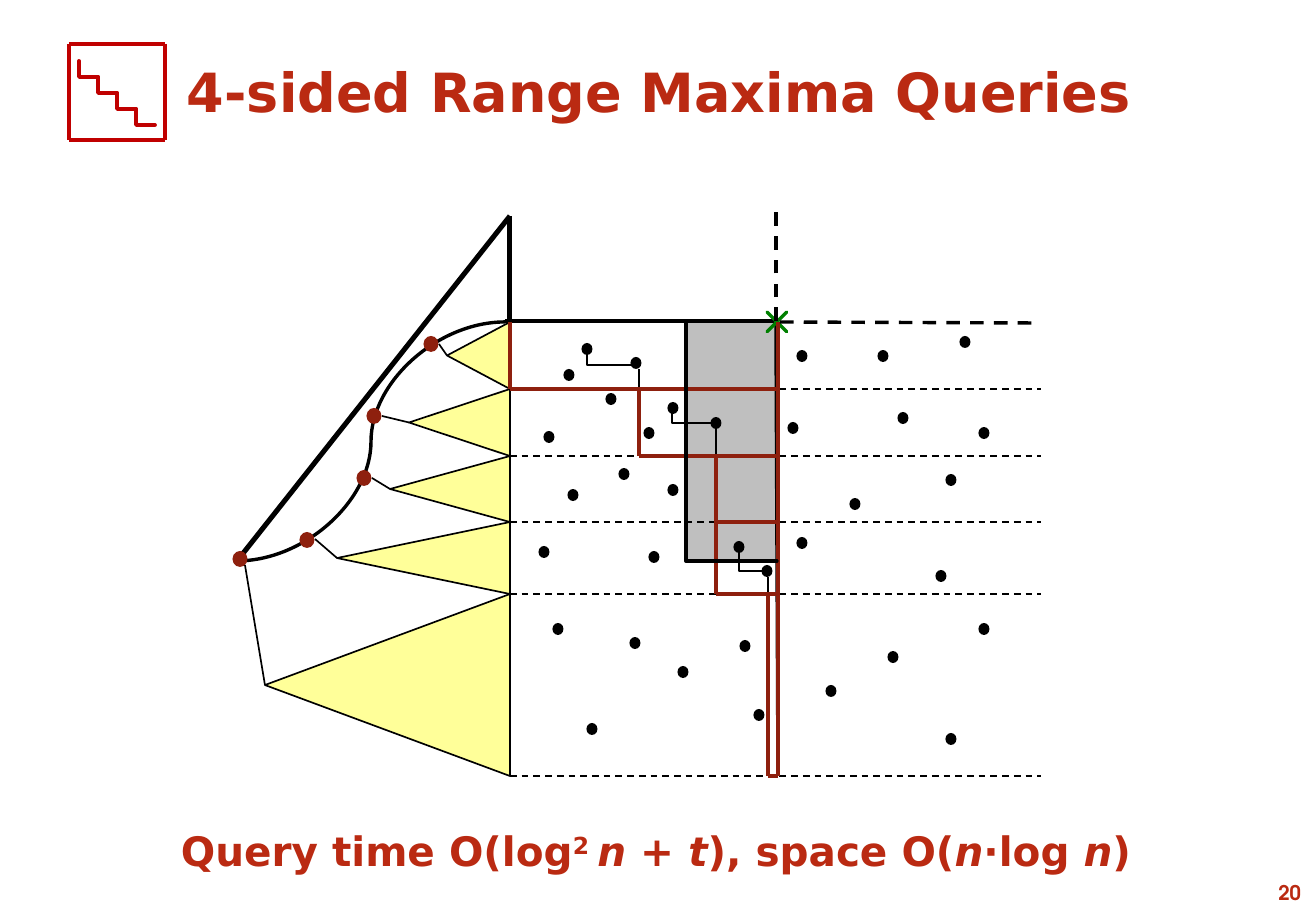
from lxml import etree
from pptx import Presentation
from pptx.dml.color import RGBColor
from pptx.enum.dml import MSO_LINE
from pptx.enum.shapes import MSO_CONNECTOR, MSO_SHAPE
from pptx.enum.text import MSO_ANCHOR, MSO_AUTO_SIZE, PP_ALIGN
from pptx.oxml.ns import qn
from pptx.util import Pt

EMU_PER_PX = 7526
SLIDE_WIDTH, SLIDE_HEIGHT = 1316, 911
TITLE_ONLY = 5

STRAIGHT, CURVE = MSO_CONNECTOR.STRAIGHT, MSO_CONNECTOR.CURVE
RECTANGLE, TRIANGLE = MSO_SHAPE.RECTANGLE, MSO_SHAPE.ISOSCELES_TRIANGLE
CORNER, DOT = MSO_SHAPE.CORNER, MSO_SHAPE.FLOWCHART_CONNECTOR
CROSS = MSO_SHAPE.MATH_MULTIPLY
DASH = MSO_LINE.DASH
LEFT, CENTER, RIGHT = PP_ALIGN.LEFT, PP_ALIGN.CENTER, PP_ALIGN.RIGHT
MIDDLE, NO_AUTOFIT = MSO_ANCHOR.MIDDLE, MSO_AUTO_SIZE.NONE

BLACK = RGBColor(0x00, 0x00, 0x00)
GREY = RGBColor(0xBF, 0xBF, 0xBF)
YELLOW = RGBColor(0xFF, 0xFF, 0x99)
GREEN = RGBColor(0x00, 0x80, 0x00)
ICON_RED = RGBColor(0xC0, 0x00, 0x00)
TEXT_RED = RGBColor(0xBA, 0x2A, 0x12)
DARK_RED = RGBColor(0x8E, 0x20, 0x0E)

BODY_FONT, NUMBER_FONT = "DejaVu Sans", "TeX Gyre Adventor"

AXIS, SWEEP, FAR_RIGHT = 510, 778, 1041
ROWS = [322, 389, 456, 522, 594, 776]
ROW_SPANS = list(zip(ROWS, ROWS[1:]))
STAIR_LEFTS = [AXIS, 639, 716, 716, 768]
QUERY_RANGE = (686, 322, 91, 239)
APEXES = [447, 409, 390, 337, 265]
PATH_NODES = [(431, 344), (374, 416), (364, 478), (307, 540), (240, 559)]
BRANCH_STARTS = [(439, 344), (382, 416), (372, 478), (315, 539), (245, 565)]
STAIRCASES = [
    ((587, 350, 52, 15), (639, 369, 639, 389)),
    ((672, 408, 43, 15), (716, 426, 716, 456)),
    ((739, 547, 29, 24), (768, 577, 768, 594)),
]
POINTS = [
    (624, 474), (587, 349), (573, 495), (802, 543), (549, 437), (965, 342),
    (649, 433), (636, 363), (855, 504), (654, 557), (592, 729), (767, 571),
    (544, 552), (883, 356), (673, 408), (716, 423), (951, 739), (802, 356),
    (558, 629), (941, 576), (831, 691), (793, 428), (951, 480), (903, 418),
    (635, 643), (984, 433), (673, 490), (984, 629), (745, 646), (893, 657),
    (683, 672), (739, 547), (569, 375), (759, 715), (611, 399),
]
SUMMARY = [
    ("Query time O(log", {}), ("2 ", {"raised": 30}), ("n", {"italic": True}),
    (" + ", {}), ("t", {"italic": True}), ("), space O(", {}),
    ("n", {"italic": True}), ("∙log ", {}), ("n", {"italic": True}), (")", {}),
]


def px(*lengths):
    """Turn pixel lengths into EMU."""
    return [round(length * EMU_PER_PX) for length in lengths]


def write(paragraph, text, *, size, font=BODY_FONT, italic=False, raised=0):
    """Add one formatted run of text to a paragraph."""
    run = paragraph.add_run()
    run.text = text
    run.font.name = font
    run.font.size = Pt(size)
    run.font.bold = True
    run.font.italic = italic
    run.font.color.rgb = TEXT_RED
    if raised:
        run.font._element.set("baseline", str(raised * 1000))


class Diagram:
    """Draws styled elements on the current slide."""

    def __init__(self, slide):
        """Remember the slide to draw on."""
        self.slide = slide
        self.shapes = slide.shapes

    def title(self, text, box, indent):
        """Place and fill the title placeholder."""
        heading = self.shapes.title
        heading.left, heading.top, heading.width, heading.height = px(*box)
        frame = heading.text_frame
        frame.auto_size = NO_AUTOFIT
        frame.vertical_anchor = MIDDLE
        frame.margin_left = px(indent)[0]
        frame.paragraphs[0].alignment = LEFT
        write(frame.paragraphs[0], text, size=32)

    def label(self, runs, box, align, **style):
        """Add a one-line text box made of formatted runs."""
        frame = self.shapes.add_textbox(*px(*box)).text_frame
        frame.word_wrap = True
        frame.paragraphs[0].alignment = align
        for text, changes in runs:
            write(frame.paragraphs[0], text, **style, **changes)

    def line(self, x1, y1, x2, y2, color=BLACK, width=1, dash=None, kind=STRAIGHT):
        """Add a connector between two points."""
        connector = self.shapes.add_connector(kind, *px(x1, y1, x2, y2))
        connector.line.color.rgb = color
        connector.line.width = Pt(width)
        if dash:
            connector.line.dash_style = dash
        etree.SubElement(connector._element.spPr, qn("a:effectLst"))

    def shape(self, kind, box, fill=None, color=None, width=1, adjust=()):
        """Add a preset shape with an optional fill and outline."""
        shape = self.shapes.add_shape(kind, *px(*box))
        shape.shadow.inherit = False
        if fill is None:
            shape.fill.background()
        else:
            shape.fill.solid()
            shape.fill.fore_color.rgb = fill
        if color is None:
            shape.line.fill.background()
        else:
            shape.line.color.rgb = color
            shape.line.width = Pt(width)
        for index, value in enumerate(adjust):
            shape.adjustments[index] = value
        return shape

    def corner(self, box, color=BLACK, width=1):
        """Add a thin L running down and then right."""
        self.shape(CORNER, box, color=color, width=width, adjust=(0, 0))

    def dot(self, x, y, width, height, color):
        """Add a filled dot around a centre."""
        self.shape(DOT, (x - width / 2, y - height / 2, width, height), color)

    def subtree(self, apex, top, bottom):
        """Add a triangle pointing left from the axis."""
        base, depth = bottom - top, AXIS - apex
        center_x, center_y = (apex + AXIS) / 2, (top + bottom) / 2
        box = (center_x - base / 2, center_y - depth / 2, base, depth)
        self.shape(TRIANGLE, box, YELLOW, BLACK).rotation = 270

    def icon(self, left, top, side):
        """Add the framed staircase beside the title."""
        right, bottom = left + side, top + side
        for edge in [(left, top, left, bottom), (left, bottom, right, bottom),
                     (right, top, right, bottom), (left, top, right, top)]:
            self.line(*edge, ICON_RED, 2.25)
        for step in range(4):
            self.corner((left + 10 + 19 * step, top + 17 + 16 * step, 19, 16),
                        ICON_RED, 2.25)


def main():
    """Build and save the slide."""
    deck = Presentation()
    deck.slide_width, deck.slide_height = px(SLIDE_WIDTH, SLIDE_HEIGHT)
    diagram = Diagram(deck.slides.add_slide(deck.slide_layouts[TITLE_ONLY]))

    diagram.title("4-sided Range Maxima Queries", (64, 44, 1185, 94), 123)
    diagram.icon(69, 44, 96)

    diagram.shape(RECTANGLE, QUERY_RANGE, GREY)
    for staircase, stub in STAIRCASES:
        diagram.corner(staircase)
        diagram.line(*stub)

    diagram.line(237, 561, 505, 322, width=2, kind=CURVE)
    for apex, (top, bottom) in zip(APEXES, ROW_SPANS):
        diagram.subtree(apex, top, bottom)
    diagram.line(237, 561, AXIS, 216, width=3)
    diagram.line(AXIS, 322, AXIS, 216, width=3)
    for node, start, apex, (top, bottom) in zip(
            PATH_NODES, BRANCH_STARTS, APEXES, ROW_SPANS):
        diagram.dot(*node, 15, 16, DARK_RED)
        diagram.line(*start, apex, (top + bottom) / 2)

    diagram.line(505, 321, 779, 321, width=2)
    for row in ROWS[1:]:
        diagram.line(AXIS, row, FAR_RIGHT, row, dash=DASH)
    for point in POINTS:
        diagram.dot(*point, 11, 12, BLACK)

    diagram.line(SWEEP, 776, 776, 321, width=2)
    diagram.shape(CROSS, (758, 303, 38, 38), color=GREEN, width=2, adjust=(0,))
    for left, (top, bottom) in zip(STAIR_LEFTS, ROW_SPANS):
        for edge in [(left, top, left, bottom), (left, bottom, SWEEP, bottom),
                     (SWEEP, top, SWEEP, bottom)]:
            diagram.line(*edge, DARK_RED, 2)
    diagram.corner(QUERY_RANGE, width=2)
    diagram.line(780, 322, 1035, 323, width=2, dash=DASH)
    diagram.line(776, 321, 776, 205, width=2, dash=DASH)

    diagram.label(SUMMARY, (156, 820, 1000, 61), CENTER, size=24)
    diagram.label([("20", {})], (1194, 874, 119, 36), RIGHT, size=12, font=NUMBER_FONT)
    deck.save("out.pptx")


if __name__ == "__main__":
    main()
